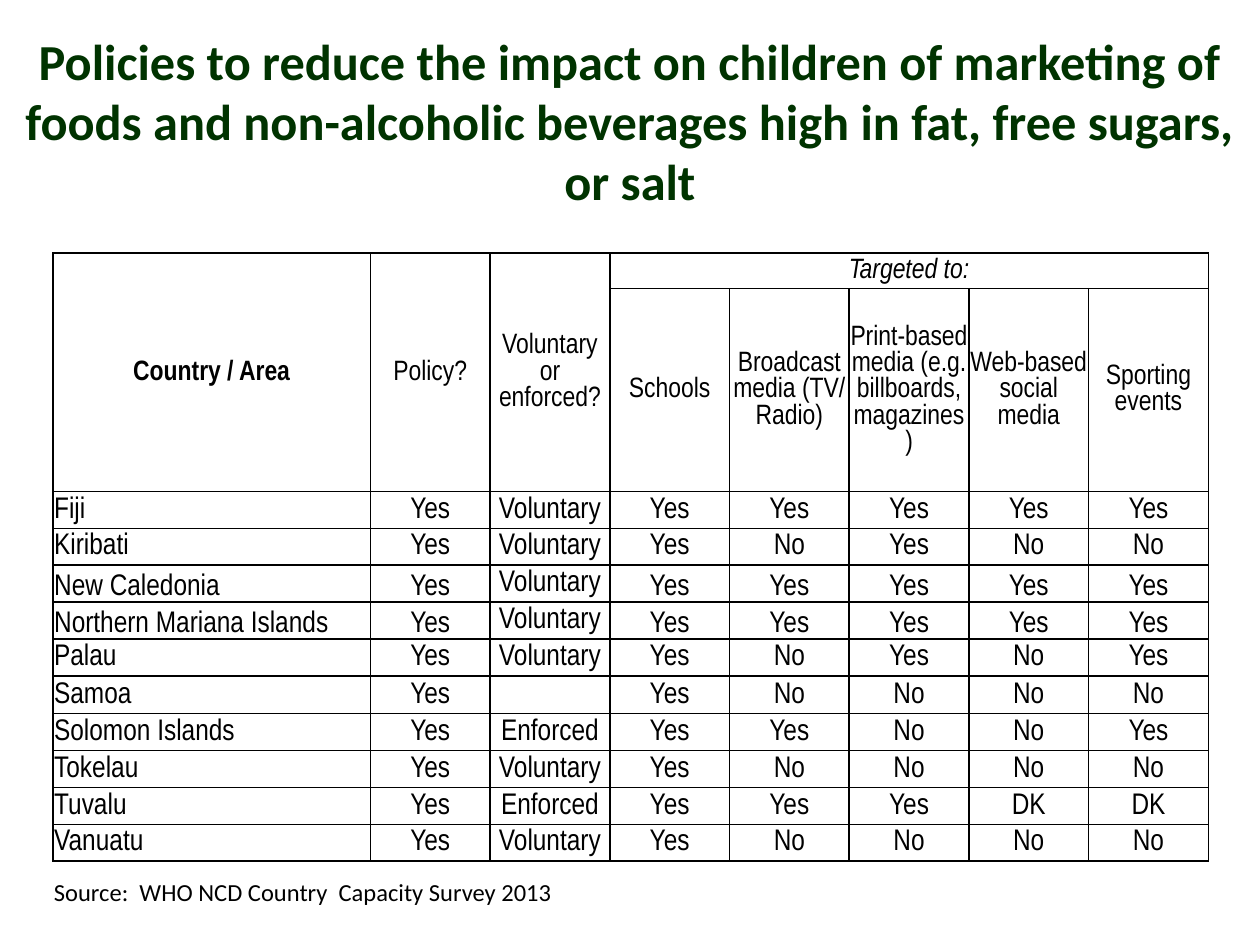
from lxml import etree
from pptx import Presentation
from pptx import util as u
from pptx.dml.color import RGBColor
from pptx.enum import text
from pptx.oxml import ns

COLORS = {"title": "003300", "ink": "000000"}
TABLE_FONT = "Arial Narrow"
BODY_FONT = "Calibri"
TITLE = ("Policies to reduce the impact on children of marketing of foods and "
         "non-alcoholic beverages high in fat, free sugars, or salt")
LEAD_HEADS = ["Country / Area", "Policy?", "Voluntary or enforced?"]
TARGETS = ["Schools", "Broadcast media (TV/\nRadio)",
           "Print-based media (e.g. billboards, magazines)",
           "Web-based social media", "Sporting events"]
COUNTRIES = [
    ("Fiji", "Yes", "Voluntary", "Yes", "Yes", "Yes", "Yes", "Yes"),
    ("Kiribati", "Yes", "Voluntary", "Yes", "No", "Yes", "No", "No"),
    ("New Caledonia", "Yes", "Voluntary", "Yes", "Yes", "Yes", "Yes", "Yes"),
    ("Northern Mariana Islands", "Yes", "Voluntary", "Yes", "Yes", "Yes", "Yes", "Yes"),
    ("Palau", "Yes", "Voluntary", "Yes", "No", "Yes", "No", "Yes"),
    ("Samoa", "Yes", "", "Yes", "No", "No", "No", "No"),
    ("Solomon Islands", "Yes", "Enforced", "Yes", "Yes", "No", "No", "Yes"),
    ("Tokelau", "Yes", "Voluntary", "Yes", "No", "No", "No", "No"),
    ("Tuvalu", "Yes", "Enforced", "Yes", "Yes", "Yes", "DK", "DK"),
    ("Vanuatu", "Yes", "Voluntary", "Yes", "No", "No", "No", "No"),
]
BOTTOM_ALIGNED = {"New Caledonia", "Northern Mariana Islands"}
HEAD_ROWS = 2


class SlideBuilder:
    def __init__(self, slide):
        self.slide = slide

    def style(self, frame, font, size, color, align, bold=False, italic=False):
        for paragraph in frame.paragraphs:
            paragraph.alignment = align
            for run in paragraph.runs:
                run.font.name = font
                run.font.size = u.Pt(size)
                run.font.bold = bold
                run.font.italic = italic
                run.font.color.rgb = RGBColor.from_string(COLORS[color])

    def title(self, wording, left, top, width, height):
        heading = self.slide.shapes.title
        heading.left, heading.top = u.Inches(left), u.Inches(top)
        heading.width, heading.height = u.Inches(width), u.Inches(height)
        frame = heading.text_frame
        frame.text = wording
        frame.auto_size = text.MSO_AUTO_SIZE.NONE
        frame.vertical_anchor = text.MSO_ANCHOR.MIDDLE
        self.style(frame, BODY_FONT, 28.8, "title", text.PP_ALIGN.CENTER, bold=True)

    def label(self, wording, left, top, width, height):
        box = self.slide.shapes.add_textbox(*map(u.Inches, (left, top, width, height)))
        frame = box.text_frame
        frame.text = wording
        frame.word_wrap = False
        frame.auto_size = text.MSO_AUTO_SIZE.SHAPE_TO_FIT_TEXT
        self.style(frame, BODY_FONT, 14, "ink", text.PP_ALIGN.LEFT)

    def grid(self, left, top, widths, heights):
        """Add a plain table whose cells are bordered and unfilled."""
        frame = self.slide.shapes.add_table(
            len(heights), len(widths), u.Inches(left), u.Inches(top),
            u.Inches(sum(widths)), u.Inches(sum(heights)))
        table = frame.table
        table.first_row = table.horz_banding = False
        for column, width in zip(table.columns, widths):
            column.width = u.Inches(width)
        for row, height in zip(table.rows, heights):
            row.height = u.Inches(height)
        for cell in table.iter_cells():
            self.border(cell)
            cell.fill.background()
            cell.margin_left = cell.margin_right = cell.margin_top = u.Inches(0.01)
            cell.margin_bottom = 0
        return table

    def border(self, cell):
        properties = cell._tc.get_or_add_tcPr()
        for side in ("a:lnL", "a:lnR", "a:lnT", "a:lnB"):
            line = etree.SubElement(properties, ns.qn(side), w=str(u.Pt(1)))
            fill = etree.SubElement(line, ns.qn("a:solidFill"))
            etree.SubElement(fill, ns.qn("a:srgbClr"), val=COLORS["ink"])

    def cell(self, cell, wording, size, align=text.PP_ALIGN.CENTER,
             anchor=text.MSO_ANCHOR.MIDDLE, bold=False, italic=False):
        cell.vertical_anchor = anchor
        cell.text_frame.text = wording
        self.style(cell.text_frame, TABLE_FONT, size, "ink", align, bold, italic)
        if not wording:  # keeps an empty cell from stretching its row
            ending = cell.text_frame.paragraphs[0]._p.get_or_add_endParaRPr()
            ending.set("sz", str(size * 100))

    def policy_table(self):
        widths = [2.52] + [0.95] * 7
        heights = [0.28, 1.61] + [0.293] * len(COUNTRIES)
        table = self.grid(0.42, 2.01, widths, heights)
        first_target = len(LEAD_HEADS)
        for col, head in enumerate(LEAD_HEADS):
            table.cell(0, col).merge(table.cell(1, col))
            self.cell(table.cell(0, col), head, 16, bold=col == 0)
        table.cell(0, first_target).merge(table.cell(0, len(widths) - 1))
        self.cell(table.cell(0, first_target), "Targeted to:", 16, italic=True)
        for col, target in enumerate(TARGETS, first_target):
            self.cell(table.cell(1, col), target, 16)
        for row, answers in enumerate(COUNTRIES, HEAD_ROWS):
            for col, answer in enumerate(answers):
                low = answers[0] in BOTTOM_ALIGNED and col != 2
                self.cell(
                    table.cell(row, col), answer, 17,
                    align=text.PP_ALIGN.CENTER if col else text.PP_ALIGN.LEFT,
                    anchor=text.MSO_ANCHOR.BOTTOM if low else text.MSO_ANCHOR.MIDDLE)


def main():
    deck = Presentation()
    deck.slide_width, deck.slide_height = u.Inches(10), u.Inches(7.5)
    builder = SlideBuilder(deck.slides.add_slide(deck.slide_layouts[5]))
    builder.title(TITLE, 0, 0.33, 10, 1.25)
    builder.policy_table()
    builder.label("Source:  WHO NCD Country  Capacity Survey 2013", 0.33, 6.91, 4.71, 0.34)
    deck.save("out.pptx")


if __name__ == "__main__":
    main()
